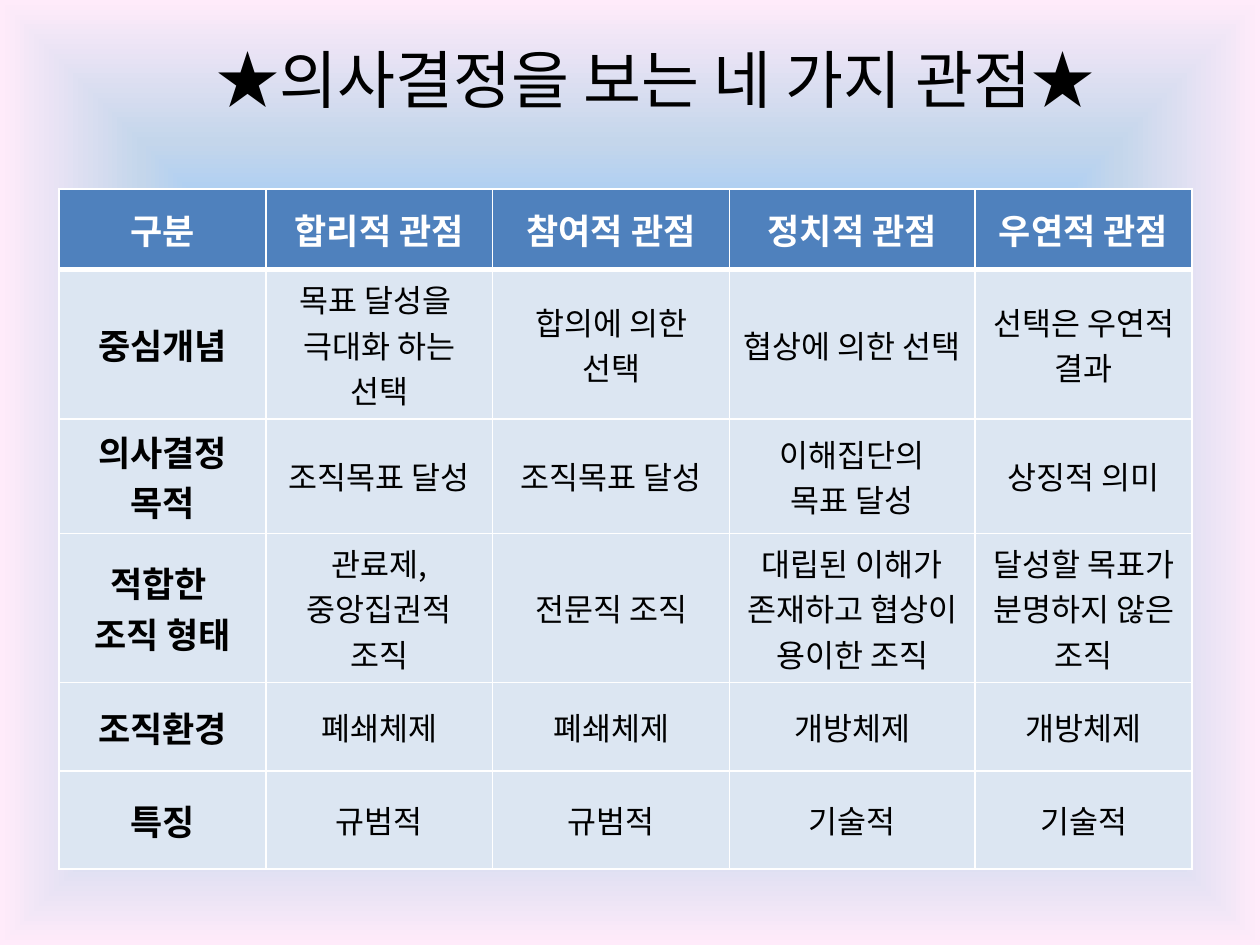
from lxml import etree
from pptx import Presentation
from pptx.dml.color import RGBColor
from pptx.enum.text import MSO_ANCHOR, PP_ALIGN
from pptx.oxml import parse_xml
from pptx.oxml.ns import nsdecls, qn
from pptx.util import Inches, Pt

CENTER = PP_ALIGN.CENTER
MIDDLE = MSO_ANCHOR.MIDDLE
TITLE_ONLY = 5
FONT = "Noto Sans CJK KR"
COLORS = {"text": "000000", "white": "FFFFFF", "header": "4F81BD", "body": "DCE6F2"}
BACKGROUND_STOPS = [(0, "5E9EFF"), (40, "85C2FF"), (70, "C4D6EB"), (100, "FFEBFA")]
COLUMN_WIDTHS = [1.64, 1.8, 1.88, 1.95, 1.72]
ROW_HEIGHTS = [0.64, 0.78, 0.7, 0.78, 0.7, 0.78]
TITLE = "★의사결정을 보는 네 가지 관점★"
VIEWPOINTS = [
    ["구분", "합리적 관점", "참여적 관점", "정치적 관점", "우연적 관점"],
    ["중심개념", "목표 달성을 \n극대화 하는 선택", "합의에 의한 선택",
     "협상에 의한 선택", "선택은 우연적 결과"],
    ["의사결정\n목적", "조직목표 달성", "조직목표 달성",
     "이해집단의\n목표 달성", "상징적 의미"],
    ["적합한 \n조직 형태", "관료제, 중앙집권적 조직", "전문직 조직",
     "대립된 이해가 존재하고 협상이 용이한 조직", "달성할 목표가 분명하지 않은 조직"],
    ["조직환경", "폐쇄체제", "폐쇄체제", "개방체제", "개방체제"],
    ["특징", "규범적", "규범적", "기술적", "기술적"],
]


def paint_background(slide):
    """Fill the slide with a gradient that spreads from its centre."""
    stops = "".join(
        f'<a:gs pos="{percent * 1000}"><a:srgbClr val="{color}"/></a:gs>'
        for percent, color in BACKGROUND_STOPS
    )
    background = parse_xml(
        f'<p:bg {nsdecls("p", "a")}><p:bgPr><a:gradFill rotWithShape="1">'
        f'<a:gsLst>{stops}</a:gsLst><a:path path="shape">'
        '<a:fillToRect l="50000" t="50000" r="50000" b="50000"/></a:path>'
        '</a:gradFill><a:effectLst/></p:bgPr></p:bg>'
    )
    slide.element.cSld.insert(0, background)


def write_text(frame, text, size, color, bold=False):
    """Write centred text and format all its runs."""
    frame.text = text
    for paragraph in frame.paragraphs:
        paragraph.alignment = CENTER
        for run in paragraph.runs:
            run.font.size = Pt(size)
            run.font.bold = bold
            run.font.color.rgb = RGBColor.from_string(COLORS[color])
            run.font.name = FONT
            east_asian = etree.SubElement(run.font._element, qn("a:ea"))
            east_asian.set("typeface", FONT)


def add_title(slide):
    """Place the slide heading."""
    title = slide.shapes.title
    title.left, title.top = Inches(0.7), Inches(0)
    title.width, title.height = Inches(9), Inches(1.25)
    title.text_frame.vertical_anchor = MIDDLE
    write_text(title.text_frame, TITLE, 36, "text")


def set_borders(cell, widths):
    """Draw white borders, with widths in points for each side."""
    properties = cell._tc.get_or_add_tcPr()
    for position, (side, width) in enumerate(widths.items()):
        border = parse_xml(
            f'<a:ln{side} {nsdecls("a")} w="{Pt(width)}"><a:solidFill>'
            f'<a:srgbClr val="{COLORS["white"]}"/></a:solidFill></a:ln{side}>'
        )
        properties.insert(position, border)


def fill_cell(cell, text, row, column):
    """Write and style one cell according to its place in the table."""
    is_header = row == 0
    is_label = is_header or column == 0
    write_text(cell.text_frame, text, 20 if is_label else 18,
               "white" if is_header else "text", is_label)
    cell.vertical_anchor = MIDDLE
    cell.fill.solid()
    cell.fill.fore_color.rgb = RGBColor.from_string(
        COLORS["header" if is_header else "body"])
    set_borders(cell, {"L": 1, "R": 1, "T": 3 if row == 1 else 1,
                       "B": 3 if is_header else 1})


def add_viewpoint_table(slide):
    """Add the table that compares the four viewpoints."""
    table = slide.shapes.add_table(
        len(ROW_HEIGHTS), len(COLUMN_WIDTHS), Inches(0.47), Inches(1.5),
        Inches(sum(COLUMN_WIDTHS)), Inches(sum(ROW_HEIGHTS))).table
    for column, width in zip(table.columns, COLUMN_WIDTHS):
        column.width = Inches(width)
    for row, height in zip(table.rows, ROW_HEIGHTS):
        row.height = Inches(height)
    for row, texts in enumerate(VIEWPOINTS):
        for column, text in enumerate(texts):
            fill_cell(table.cell(row, column), text, row, column)


def main():
    """Build and save the slide."""
    presentation = Presentation()
    presentation.slide_width = Inches(10)
    presentation.slide_height = Inches(7.5)
    slide = presentation.slides.add_slide(presentation.slide_layouts[TITLE_ONLY])
    paint_background(slide)
    add_title(slide)
    add_viewpoint_table(slide)
    presentation.save("out.pptx")


if __name__ == "__main__":
    main()
